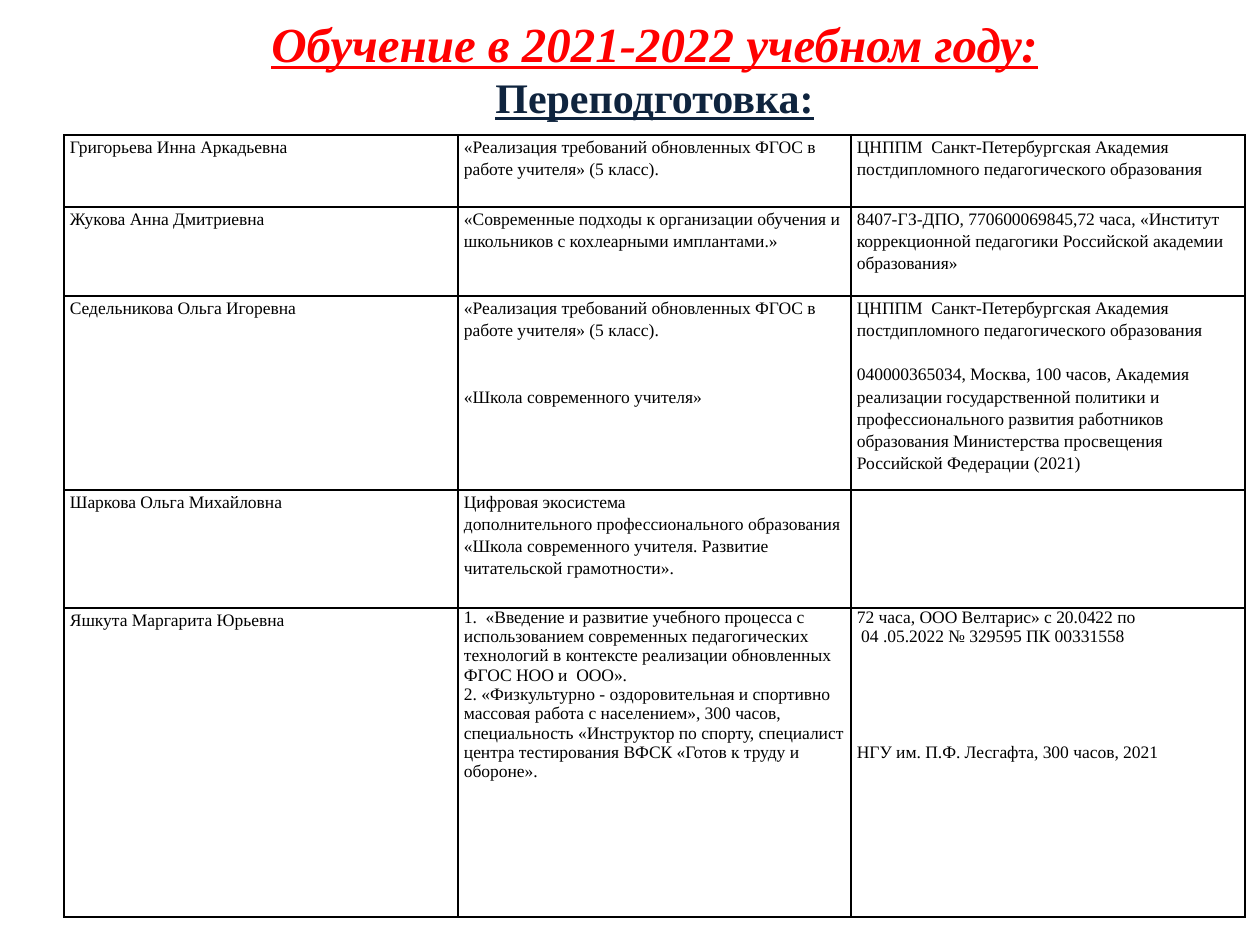
from dataclasses import dataclass

from lxml import etree
from pptx import Presentation
from pptx.dml.color import RGBColor
from pptx.enum.text import MSO_ANCHOR, PP_ALIGN
from pptx.oxml.ns import qn
from pptx.util import Emu, Pt

TOP = MSO_ANCHOR.TOP
LEFT, CENTER = PP_ALIGN.LEFT, PP_ALIGN.CENTER
EMU_PER_INCH, PX_PER_INCH = 914400, 126
FONT = "Times New Roman"
RED, NAVY, BLACK = "FF0000", "0F243E", "000000"
COLUMN_WIDTHS = (394, 393, 394)


@dataclass
class Line:
    text: str
    space_before: float = 0


@dataclass
class TrainingRow:
    height: int
    teacher: str
    courses: list[Line]
    issuers: list[Line]
    course_spacing: float = 1.15


STANDARDS_COURSE = "«Реализация требований обновленных ФГОС в работе учителя» (5 класс)."
ACADEMY = "ЦНППМ  Санкт-Петербургская Академия постдипломного педагогического образования"

ROWS = [
    TrainingRow(72, "Григорьева Инна Аркадьевна", [Line(STANDARDS_COURSE)], [Line(ACADEMY)]),
    TrainingRow(
        89, "Жукова Анна Дмитриевна",
        [Line("«Современные подходы к организации обучения и школьников с "
              "кохлеарными имплантами.»")],
        [Line("8407-ГЗ-ДПО, 770600069845,72 часа, «Институт коррекционной "
              "педагогики Российской академии образования»")]),
    TrainingRow(
        194, "Седельникова Ольга Игоревна",
        [Line(STANDARDS_COURSE), Line("«Школа современного учителя»", 25.4)],
        [Line(ACADEMY),
         Line("040000365034, Москва, 100 часов, Академия реализации "
              "государственной политики и профессионального развития работников "
              "образования Министерства просвещения Российской Федерации (2021)", 12.7)]),
    TrainingRow(
        118, "Шаркова Ольга Михайловна",
        [Line("Цифровая экосистема"),
         Line("дополнительного профессионального образования «Школа современного "
              "учителя. Развитие читательской грамотности».")],
        []),
    TrainingRow(
        309, "Яшкута Маргарита Юрьевна",
        [Line("1.  «Введение и развитие учебного процесса с использованием "
              "современных педагогических технологий в контексте реализации "
              "обновленных ФГОС НОО и  ООО»."),
         Line("2. «Физкультурно - оздоровительная и спортивно массовая работа с "
              "населением», 300 часов, специальность «Инструктор по спорту, "
              "специалист центра тестирования ВФСК «Готов к труду и обороне».")],
        [Line("72 часа, ООО Велтарис» с 20.0422 по"),
         Line(" 04 .05.2022 № 329595 ПК 00331558"),
         Line("НГУ им. П.Ф. Лесгафта, 300 часов, 2021", 55.3)],
        course_spacing=1.0),
]


def px(length: int) -> Emu:
    return Emu(round(length * EMU_PER_INCH / PX_PER_INCH))


def color(value: str) -> RGBColor:
    return RGBColor.from_string(value)


def write(frame, text: str, *, first: bool = False, size: float = 10, fill: str = BLACK,
          bold: bool = False, italic: bool = False, underline: bool = False,
          align=LEFT, spacing: float = 1.0, before: float = 0) -> None:
    para = frame.paragraphs[0] if first else frame.add_paragraph()
    para.alignment = align
    para.line_spacing = spacing
    para.space_before = Pt(before)
    span = para.add_run()
    span.text = text
    font = span.font
    font.name, font.size = FONT, Pt(size)
    font.bold, font.italic, font.underline = bold, italic, underline
    font.color.rgb = color(fill)


def add_borders(cell) -> None:
    properties = cell._tc.get_or_add_tcPr()
    for index, side in enumerate(("lnL", "lnR", "lnT", "lnB")):
        border = etree.Element(qn(f"a:{side}"), w=str(Pt(1)))
        solid = etree.SubElement(border, qn("a:solidFill"))
        etree.SubElement(solid, qn("a:srgbClr"), val=BLACK)
        properties.insert(index, border)


def fill_cell(cell, lines: list[Line], spacing: float) -> None:
    cell.margin_left = cell.margin_right = px(6)
    cell.margin_top = cell.margin_bottom = 0
    cell.vertical_anchor = TOP
    cell.fill.background()
    add_borders(cell)
    for index, line in enumerate(lines):
        write(cell.text_frame, line.text, first=index == 0,
              spacing=spacing, before=line.space_before)


def add_heading(page) -> None:
    box = page.shapes.add_textbox(px(116), px(0), px(1077), px(130))
    frame = box.text_frame
    frame.word_wrap = True
    frame.vertical_anchor = TOP
    frame.margin_top = px(13)
    write(frame, "Обучение в 2021-2022 учебном году:", first=True, size=28, fill=RED,
          bold=True, italic=True, underline=True, align=CENTER)
    write(frame, "Переподготовка:", size=24, fill=NAVY,
          bold=True, underline=True, align=CENTER)


def add_training_table(page, rows: list[TrainingRow]) -> None:
    height = sum(row.height for row in rows)
    table = page.shapes.add_table(len(rows), len(COLUMN_WIDTHS), px(64), px(135),
                                  px(sum(COLUMN_WIDTHS)), px(height)).table
    table.first_row = table.horz_banding = False
    for column, width in zip(table.columns, COLUMN_WIDTHS):
        column.width = px(width)
    for table_row, row in zip(table.rows, rows):
        table_row.height = px(row.height)
        teacher, course, issuer = table_row.cells
        fill_cell(teacher, [Line(row.teacher)], 1.15)
        fill_cell(course, row.courses, row.course_spacing)
        fill_cell(issuer, row.issuers, row.course_spacing)


def main() -> None:
    deck = Presentation()
    deck.slide_width, deck.slide_height = px(1260), px(945)
    page = deck.slides.add_slide(deck.slide_layouts[6])
    add_heading(page)
    add_training_table(page, ROWS)
    deck.save("out.pptx")


if __name__ == "__main__":
    main()
